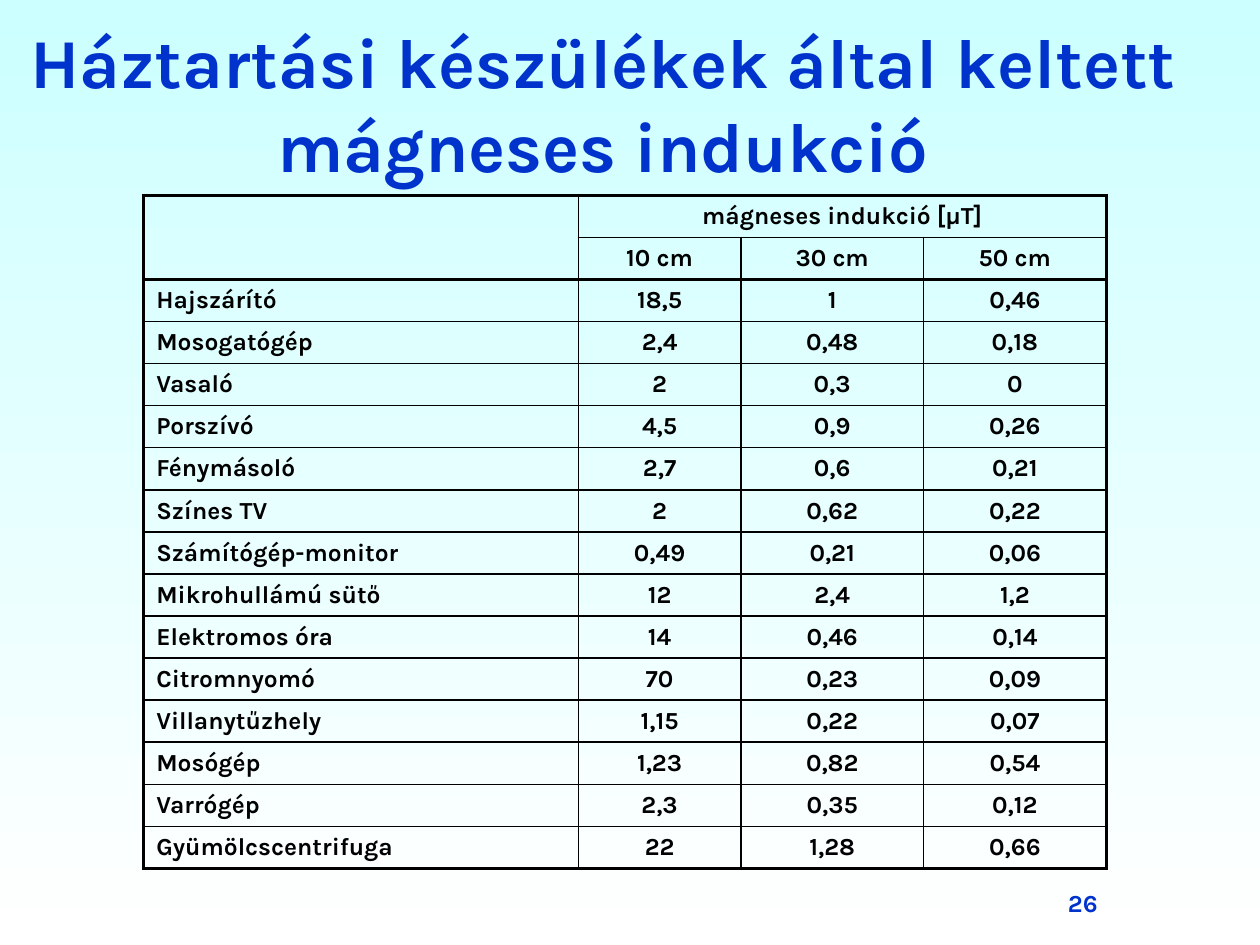
from dataclasses import dataclass

from lxml import etree
from pptx import Presentation
from pptx import util as u
from pptx.dml.color import RGBColor
from pptx.enum import text as t
from pptx.oxml import ns

SLIDE_WIDTH, SLIDE_HEIGHT = u.Inches(10), u.Inches(7.5)


@dataclass(frozen=True)
class Theme:
    font: str = "Karla"
    accent: str = "0033CC"
    ink: str = "000000"
    sky: str = "CCFFFF"
    ground: str = "FFFFFF"
    title_size: int = 40
    body_size: int = 14
    thin_line: int = 1
    heavy_line: int = 2


THEME = Theme()
PLAIN_TABLE_STYLE = "{2D5ABB26-0587-4C30-8999-92F81FD0307C}"
COLUMN_SHARES = (34.5, 12.9, 14.5, 14.5)
HEADER_ROWS = 2
ROWS = [
    ("", "mágneses indukció [μT]", "", ""),
    ("", "10 cm", "30 cm", "50 cm"),
    ("Hajszárító", "18,5", "1", "0,46"),
    ("Mosogatógép", "2,4", "0,48", "0,18"),
    ("Vasaló", "2", "0,3", "0"),
    ("Porszívó", "4,5", "0,9", "0,26"),
    ("Fénymásoló", "2,7", "0,6", "0,21"),
    ("Színes TV", "2", "0,62", "0,22"),
    ("Számítógép-monitor", "0,49", "0,21", "0,06"),
    ("Mikrohullámú sütő", "12", "2,4", "1,2"),
    ("Elektromos óra", "14", "0,46", "0,14"),
    ("Citromnyomó", "70", "0,23", "0,09"),
    ("Villanytűzhely", "1,15", "0,22", "0,07"),
    ("Mosógép", "1,23", "0,82", "0,54"),
    ("Varrógép", "2,3", "0,35", "0,12"),
    ("Gyümölcscentrifuga", "22", "1,28", "0,66"),
]


def across(percent):
    return round(SLIDE_WIDTH * percent / 100)


def down(percent):
    return round(SLIDE_HEIGHT * percent / 100)


def write_text(frame, content, *, size=THEME.body_size, color=THEME.ink,
               align=t.PP_ALIGN.LEFT):
    paragraph = frame.paragraphs[0]
    paragraph.alignment = align
    if not content:
        # An empty cell still takes its line height from the end mark
        etree.SubElement(paragraph._p, ns.qn("a:endParaRPr"), sz=str(size * 100))
        return
    run = paragraph.add_run()
    run.text = content
    run.font.name = THEME.font
    run.font.size = u.Pt(size)
    run.font.bold = True
    run.font.color.rgb = RGBColor.from_string(color)


def add_label(slide, content, box, *, anchor=t.MSO_ANCHOR.TOP,
              bottom_margin=u.Inches(0.05), **text_format):
    frame = slide.shapes.add_textbox(*box).text_frame
    frame.word_wrap = True
    frame.vertical_anchor = anchor
    frame.margin_bottom = bottom_margin
    write_text(frame, content, **text_format)


def paint_background(slide):
    fill = slide.background.fill
    fill.gradient()
    fill.gradient_angle = 270
    for stop, color, position in zip(fill.gradient_stops,
                                     (THEME.sky, THEME.ground), (0, 1)):
        stop.color.rgb = RGBColor.from_string(color)
        stop.position = position


def draw_borders(cell, row, column):
    """Heavy lines frame the table and close its header; the rest are thin."""
    heavy_rows = (0, HEADER_ROWS, len(ROWS))
    heavy_columns = (0, len(COLUMN_SHARES))
    height, width = (1, 1) if cell.is_spanned else (cell.span_height, cell.span_width)
    edges = {
        "L": column in heavy_columns,
        "R": column + width in heavy_columns,
        "T": row in heavy_rows,
        "B": row + height in heavy_rows,
    }
    properties = cell._tc.get_or_add_tcPr()
    for side, heavy in edges.items():
        if cell.is_spanned and not heavy:
            continue
        points = THEME.heavy_line if heavy else THEME.thin_line
        line = etree.SubElement(properties, ns.qn(f"a:ln{side}"), w=str(u.Pt(points)))
        fill = etree.SubElement(line, ns.qn("a:solidFill"))
        etree.SubElement(fill, ns.qn("a:srgbClr"), val=THEME.ink)


def add_induction_table(slide):
    frame = slide.shapes.add_table(
        len(ROWS), len(COLUMN_SHARES), across(11.4), down(20.67),
        across(sum(COLUMN_SHARES)), down(67.07))
    table = frame.table
    table.first_row = table.horz_banding = False
    table._tbl.tblPr.find(ns.qn("a:tableStyleId")).text = PLAIN_TABLE_STYLE
    for column, share in zip(table.columns, COLUMN_SHARES):
        column.width = across(share)

    # Header spans: blank corner and the quantity above its distances
    table.cell(0, 0).merge(table.cell(1, 0))
    table.cell(0, 1).merge(table.cell(0, 3))

    for row, values in enumerate(ROWS):
        for column, value in enumerate(values):
            cell = table.cell(row, column)
            cell.vertical_anchor = t.MSO_ANCHOR.MIDDLE
            draw_borders(cell, row, column)
            cell.fill.background()
            write_text(cell.text_frame, value,
                       align=t.PP_ALIGN.CENTER if column else t.PP_ALIGN.LEFT)


def main():
    presentation = Presentation()
    presentation.slide_width, presentation.slide_height = SLIDE_WIDTH, SLIDE_HEIGHT
    slide = presentation.slides.add_slide(presentation.slide_layouts[6])
    paint_background(slide)

    # Page number
    add_label(slide, "26", (across(67.3), down(93.33), across(20.8), down(6.67)),
              color=THEME.accent, align=t.PP_ALIGN.RIGHT)

    # Title, raised above the table by its bottom margin
    add_label(slide, "Háztartási készülékek által keltett mágneses indukció",
              (0, down(6.93), across(95.7), down(16.67)),
              anchor=t.MSO_ANCHOR.MIDDLE, bottom_margin=u.Inches(0.71),
              size=THEME.title_size, color=THEME.accent, align=t.PP_ALIGN.CENTER)

    add_induction_table(slide)
    presentation.save("out.pptx")


if __name__ == "__main__":
    main()
